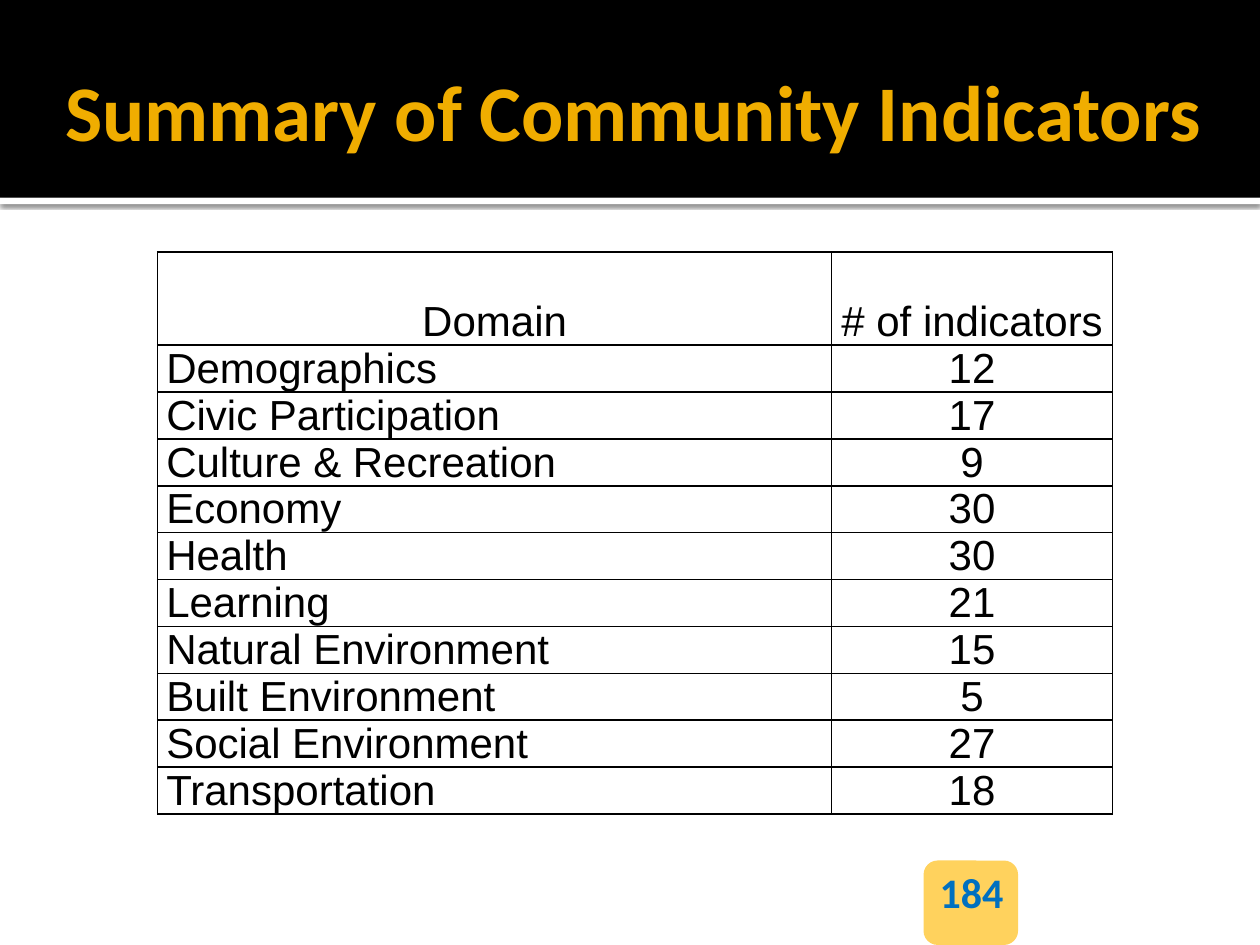
from lxml.etree import SubElement
from pptx import Presentation
from pptx.dml.color import RGBColor
from pptx.enum.shapes import MSO_SHAPE
from pptx.enum.text import MSO_ANCHOR, PP_ALIGN
from pptx.oxml.ns import qn
from pptx.util import Inches, Pt

INDICATORS = [
    ("Demographics", 12),
    ("Civic Participation", 17),
    ("Culture & Recreation", 9),
    ("Economy", 30),
    ("Health", 30),
    ("Learning", 21),
    ("Natural Environment", 15),
    ("Built Environment", 5),
    ("Social Environment", 27),
    ("Transportation", 18),
]


def color(value):
    return RGBColor.from_string(value)


def style(para, font_name, size, hex_color, bold=False, align=PP_ALIGN.CENTER):
    para.alignment = align
    font = para.font
    font.name, font.size, font.bold = font_name, Pt(size), bold
    font.color.rgb = color(hex_color)


def set_margins(box, left, top, right, bottom):
    box.margin_left, box.margin_top = Inches(left), Inches(top)
    box.margin_right, box.margin_bottom = Inches(right), Inches(bottom)


def add_block(page, kind, left, top, width, height, fill):
    block = page.shapes.add_shape(
        kind, Inches(left), Inches(top), Inches(width), Inches(height))
    block.shadow.inherit = False
    block.fill.solid()
    block.fill.fore_color.rgb = color(fill)
    block.line.fill.background()
    return block


def add_soft_shadow(shape):
    effects = shape._element.spPr.find(qn("a:effectLst"))
    shadow = SubElement(effects, qn("a:outerShdw"), blurRad=str(Pt(2.5)),
                        dist=str(Pt(0.8)), dir="5400000", algn="t", rotWithShape="0")
    tint = SubElement(shadow, qn("a:srgbClr"), val="000000")
    SubElement(tint, qn("a:alpha"), val="60000")


def add_header(page, left, top, width, height):
    rule = add_block(page, MSO_SHAPE.RECTANGLE, left, top + height, width, 0.05, "FFFFFF")
    add_soft_shadow(rule)
    add_block(page, MSO_SHAPE.RECTANGLE, left, top, width, height, "000000")

    title = page.shapes.title
    page.shapes._spTree.append(title._element)  # bring in front of the band
    title.left, title.top = Inches(left), Inches(top + 0.25)
    title.width, title.height = Inches(width), Inches(1.25)
    frame = title.text_frame
    frame.text = "Summary of Community Indicators"
    frame.vertical_anchor = MSO_ANCHOR.MIDDLE
    set_margins(frame, 0.1, 0.05, 0.05, 0.05)
    style(frame.paragraphs[0], "Calibri", 45, "F0AD00", bold=True)


def add_borders(cell):
    properties = cell._tc.get_or_add_tcPr()
    for position, side in enumerate(("a:lnL", "a:lnR", "a:lnT", "a:lnB")):
        line = properties.makeelement(qn(side), {"w": str(Pt(1))})
        fill = SubElement(line, qn("a:solidFill"))
        SubElement(fill, qn("a:srgbClr"), val="000000")
        properties.insert(position, line)


def fill_cell(cell, text, align):
    cell.text = text
    cell.fill.background()
    cell.vertical_anchor = MSO_ANCHOR.BOTTOM
    set_margins(cell, 0.07, 0, 0.07, 0)
    style(cell.text_frame.paragraphs[0], "Arial", 24, "000000", align=align)
    add_borders(cell)


def add_indicator_table(page, left, top, width, row_height):
    """The heading row is twice as tall as the others."""
    rows = [("Domain", "# of indicators"), *INDICATORS]
    height = row_height * (len(rows) + 1)
    table = page.shapes.add_table(
        len(rows), 2, Inches(left), Inches(top), Inches(width), Inches(height)).table
    table.first_row = table.horz_banding = False
    count_width = 2.23
    table.columns[0].width = Inches(width - count_width)
    table.columns[1].width = Inches(count_width)
    for index, (domain, count) in enumerate(rows):
        table.rows[index].height = Inches(row_height * (1 if index else 2))
        fill_cell(table.cell(index, 0), domain,
                  PP_ALIGN.LEFT if index else PP_ALIGN.CENTER)
        fill_cell(table.cell(index, 1), str(count), PP_ALIGN.CENTER)


def add_page_number(page, left, top, width, height):
    box = page.shapes.add_textbox(Inches(left), Inches(top), Inches(width), Inches(height))
    frame = box.text_frame
    frame.word_wrap = True
    frame.text = "184"
    style(frame.paragraphs[0], "Calibri", 24, "0070C0", bold=True)


def main():
    deck = Presentation()
    deck.slide_width, deck.slide_height = Inches(10), Inches(7.5)
    page = deck.slides.add_slide(deck.slide_layouts[5])
    add_header(page, 0, 0, 10, 1.57)
    add_block(page, MSO_SHAPE.ROUNDED_RECTANGLE, 7.33, 6.83, 0.75, 0.67, "FFD25D")
    add_indicator_table(page, 1.25, 2, 7.58, 0.37)
    add_page_number(page, 7, 6.83, 1.42, 0.5)
    deck.save("out.pptx")


if __name__ == "__main__":
    main()
